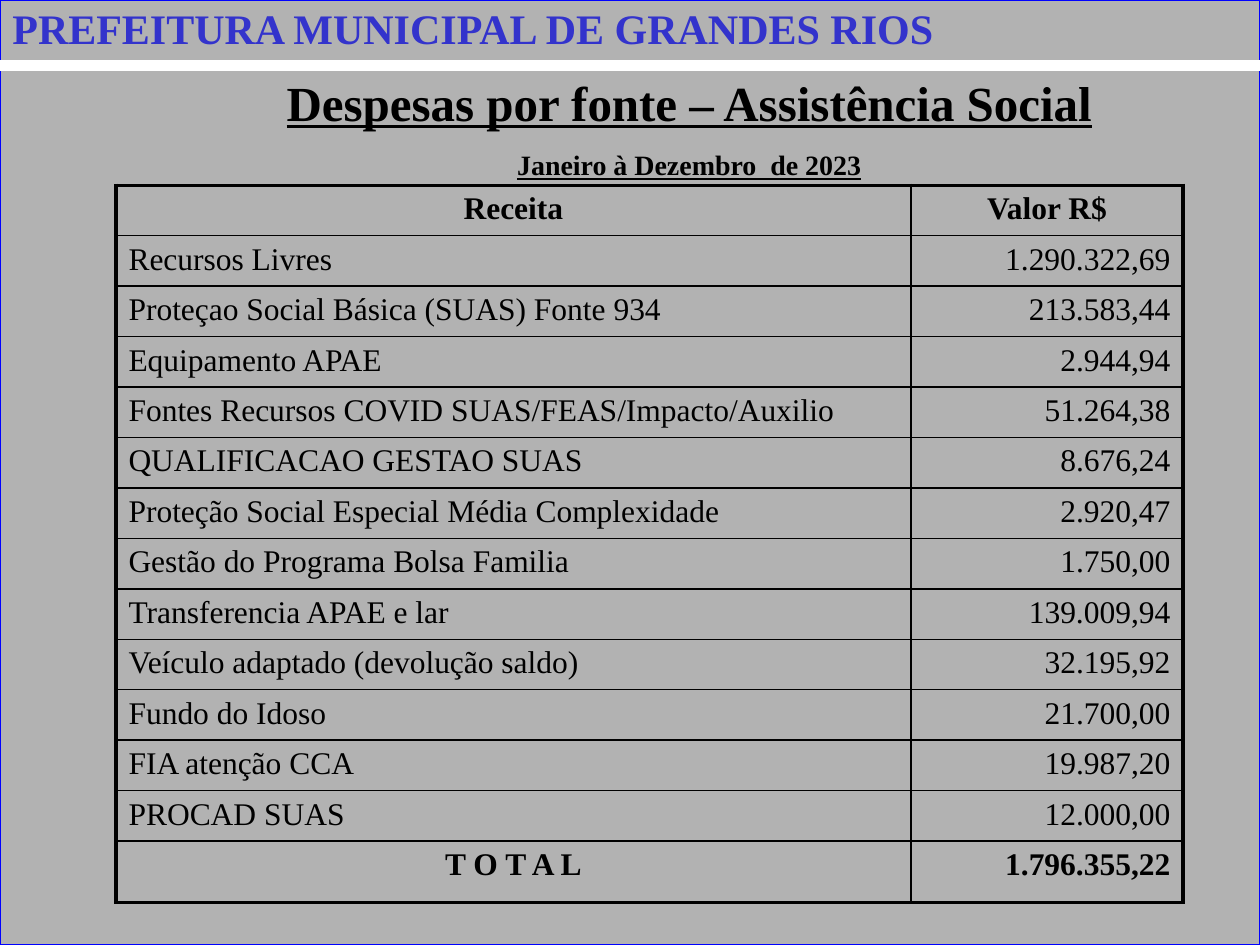
from lxml.etree import SubElement
from pptx import Presentation
from pptx.dml.color import RGBColor
from pptx.enum.shapes import MSO_CONNECTOR, MSO_SHAPE
from pptx.enum.text import MSO_ANCHOR, MSO_AUTO_SIZE, PP_ALIGN
from pptx.oxml import parse_xml
from pptx.oxml.ns import nsdecls, qn
from pptx.util import Inches, Pt

EXPENSES = [
    ("Recursos Livres", "1.290.322,69"),
    ("Proteçao Social Básica (SUAS) Fonte 934", "213.583,44"),
    ("Equipamento APAE", "2.944,94"),
    ("Fontes Recursos COVID SUAS/FEAS/Impacto/Auxilio", "51.264,38"),
    ("QUALIFICACAO GESTAO SUAS", "8.676,24"),
    ("Proteção Social Especial Média Complexidade", "2.920,47"),
    ("Gestão do Programa Bolsa Familia", "1.750,00"),
    ("Transferencia APAE e lar", "139.009,94"),
    ("Veículo adaptado (devolução saldo)", "32.195,92"),
    ("Fundo do Idoso", "21.700,00"),
    ("FIA atenção CCA", "19.987,20"),
    ("PROCAD SUAS", "12.000,00"),
]


def color(value):
    return RGBColor.from_string(value)


class ReportSlide:
    font = "Times New Roman"
    ink = "000000"
    columns, rows = 100, 75

    def __init__(self, presentation):
        self.width = presentation.slide_width
        self.height = presentation.slide_height
        self.slide = presentation.slides.add_slide(presentation.slide_layouts[5])
        self.shapes = self.slide.shapes

    def across(self, count):
        return round(self.width * count / self.columns)

    def down(self, count):
        return round(self.height * count / self.rows)

    def area(self, left, top, width, height):
        return self.across(left), self.down(top), self.across(width), self.down(height)

    def text_run(self, paragraph, text, size, bold=True, underline=False, ink=None):
        run = paragraph.add_run()
        run.text = text
        run.font.name = self.font
        run.font.size = Pt(size)
        run.font.bold = bold
        run.font.underline = underline
        run.font.color.rgb = color(ink or self.ink)
        return run

    def background(self, fill, line):
        shape = self.shapes.add_shape(MSO_SHAPE.RECTANGLE, 0, 0, self.width, self.height)
        shape.shadow.inherit = False
        shape.fill.solid()
        shape.fill.fore_color.rgb = color(fill)
        shape.line.color.rgb = color(line)
        shape.line.width = Pt(0.75)

    def rule(self, row, ink, weight):
        connector = self.shapes.add_connector(
            MSO_CONNECTOR.STRAIGHT, 0, self.down(row), self.width, self.down(row))
        connector.line.color.rgb = color(ink)
        connector.line.width = Pt(weight)
        SubElement(connector.element.spPr, qn("a:effectLst"))

    def title(self, area, lines):
        shape = self.shapes.title
        shape.element.getparent().append(shape.element)
        shape.left, shape.top, shape.width, shape.height = self.area(*area)
        frame = shape.text_frame
        frame.auto_size = MSO_AUTO_SIZE.NONE
        frame.vertical_anchor = MSO_ANCHOR.TOP
        for index, (text, size) in enumerate(lines):
            paragraph = frame.add_paragraph() if index else frame.paragraphs[0]
            paragraph.alignment = PP_ALIGN.CENTER
            paragraph.line_spacing = 1.5
            self.text_run(paragraph, text, size, underline=True)

    def banner(self, area, text, size, ink):
        frame = self.shapes.add_textbox(*self.area(*area)).text_frame
        frame.word_wrap = True
        run = self.text_run(frame.paragraphs[0], text, size, ink=ink)
        shadow = parse_xml(
            f'<a:effectLst {nsdecls("a")}><a:outerShdw dist="35921" dir="2700000">'
            '<a:srgbClr val="808080"/></a:outerShdw></a:effectLst>')
        run.font._element.find(qn("a:solidFill")).addnext(shadow)

    def border(self, cell, side, weight):
        line = SubElement(cell._tc.get_or_add_tcPr(), qn(f"a:ln{side}"), w=str(Pt(weight)))
        fill = SubElement(line, qn("a:solidFill"))
        SubElement(fill, qn("a:srgbClr"), val=self.ink)

    def table(self, area, records, widths, heights, size, thin=1, thick=2.25):
        table = self.shapes.add_table(len(records), len(widths), *self.area(*area)).table
        table.first_row = table.horz_banding = False
        for column, width in zip(table.columns, widths):
            column.width = self.across(width)
        for row, height in zip(table.rows, heights):
            row.height = self.down(height)
        last_row, last_column = len(records) - 1, len(widths) - 1
        for i, record in enumerate(records):
            emphasis = i in (0, last_row)
            for j, text in enumerate(record):
                cell = table.cell(i, j)
                edges = {"L": j == 0, "R": j == last_column, "T": i == 0, "B": i == last_row}
                for side, outer in edges.items():
                    self.border(cell, side, thick if outer else thin)
                cell.fill.background()
                paragraph = cell.text_frame.paragraphs[0]
                if i == 0 or (emphasis and j == 0):
                    paragraph.alignment = PP_ALIGN.CENTER
                else:
                    paragraph.alignment = PP_ALIGN.RIGHT if j else PP_ALIGN.LEFT
                self.text_run(paragraph, text, size, bold=emphasis)


def main():
    presentation = Presentation()
    presentation.slide_width, presentation.slide_height = Inches(10), Inches(7.5)
    report = ReportSlide(presentation)
    report.background("B2B2B2", "0000FF")
    report.rule(5.2, "FFFFFF", 6)
    report.title((14.3, 2.9, 80.8, 58.1), [
        ("Despesas por fonte – Assistência Social", 28),
        ("Janeiro à Dezembro  de 2023", 16),
    ])
    report.banner((0, -0.3, 94.9, 5), "PREFEITURA MUNICIPAL DE GRANDES RIOS", 24, "3333CC")
    records = [("Receita", "Valor R$"), *EXPENSES, ("T O T A L", "1.796.355,22")]
    heights = [4] * (len(records) - 1) + [4.9]
    report.table((9.2, 14.7, 84.7, sum(heights)), records, (63.1, 21.6), heights, 18)
    presentation.save("out.pptx")


if __name__ == "__main__":
    main()
